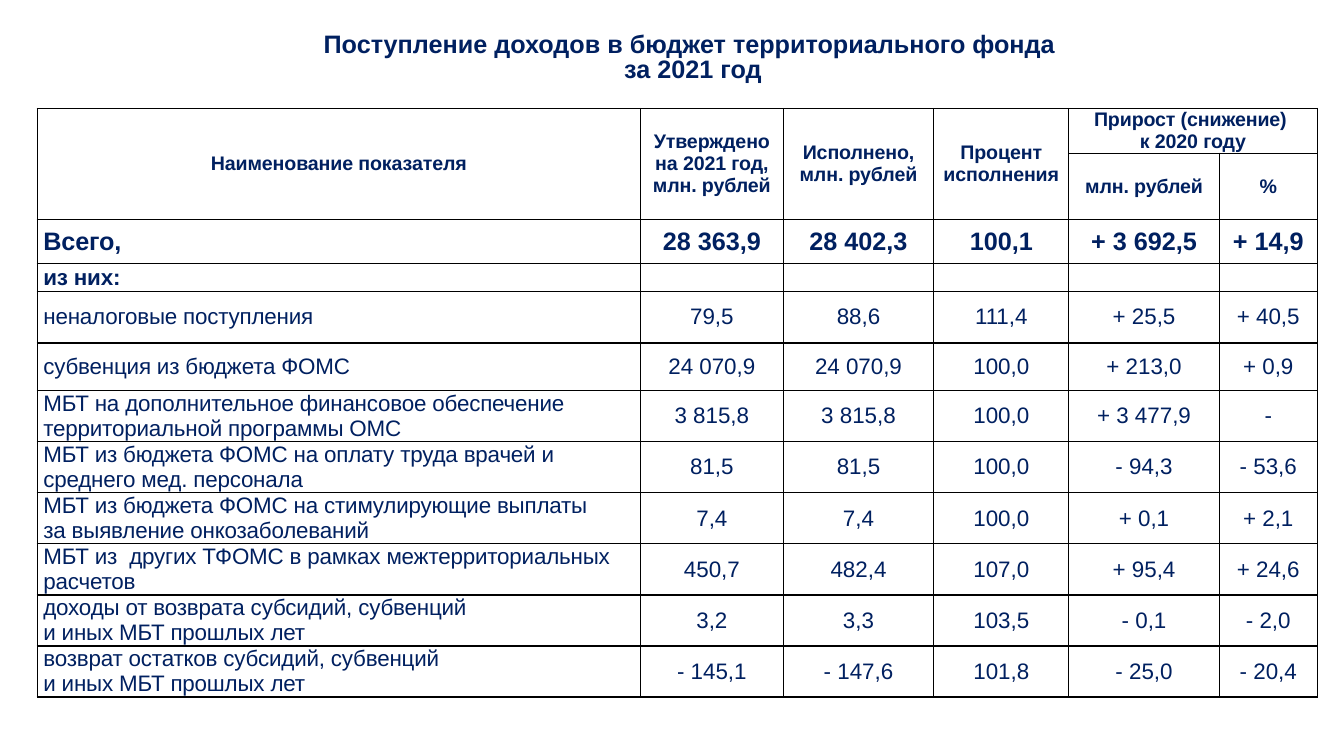
from lxml.etree import SubElement
from pptx import Presentation
from pptx.dml.color import RGBColor
from pptx.enum.text import MSO_ANCHOR, MSO_AUTO_SIZE, PP_ALIGN
from pptx.oxml.ns import qn
from pptx.util import Pt

COLORS = {"text": "002060", "border": "000000", "background": "FFFFFF"}
COLUMN_WIDTHS = [431, 102, 107.5, 96.5, 107.5, 70]
ROW_HEIGHTS = [32, 47.5, 31.5, 18.5, 37, 34] + [36.5] * 6
ROWS = [
    ["Наименование показателя", "Утверждено\nна 2021 год,\nмлн. рублей", "Исполнено, млн. рублей",
     "Процент\nисполнения", "Прирост (снижение) \vк 2020 году", ""],
    ["", "", "", "", "млн. рублей", "%"],
    ["Всего,", "28 363,9", "28 402,3", "100,1", "+ 3 692,5", "+ 14,9"],
    ["из них:", "", "", "", "", ""],
    ["неналоговые поступления", "79,5", "88,6", "111,4", "+ 25,5", "+ 40,5"],
    ["субвенция из бюджета ФОМС", "24 070,9", "24 070,9", "100,0", "+ 213,0", "+ 0,9"],
    ["МБТ на дополнительное финансовое обеспечение территориальной программы ОМС",
     "3 815,8", "3 815,8", "100,0", "+ 3 477,9", "-"],
    ["МБТ из бюджета ФОМС на оплату труда врачей и среднего мед. персонала",
     "81,5", "81,5", "100,0", "- 94,3", "- 53,6"],
    ["МБТ из бюджета ФОМС на стимулирующие выплаты \vза выявление онкозаболеваний",
     "7,4", "7,4", "100,0", "+ 0,1", "+ 2,1"],
    ["МБТ из  других ТФОМС в рамках межтерриториальных расчетов",
     "450,7", "482,4", "107,0", "+ 95,4", "+ 24,6"],
    ["доходы от возврата субсидий, субвенций \vи иных МБТ прошлых лет",
     "3,2", "3,3", "103,5", "- 0,1", "- 2,0"],
    ["возврат остатков субсидий, субвенций \vи иных МБТ прошлых лет",
     "- 145,1", "- 147,6", "101,8", "- 25,0", "- 20,4"],
]
HEADER_ROWS = 2
TOTAL_ROW = 2
FIRST_DETAIL_ROW = 4


def format_paragraph(paragraph, size, bold, alignment):
    paragraph.alignment = alignment
    for run in paragraph.runs:
        run.font.name = "Arial"
        run.font.size = Pt(size)
        run.font.bold = bold
        run.font.color.rgb = RGBColor.from_string(COLORS["text"])


def add_borders(cell):
    properties = cell._tc.get_or_add_tcPr()
    for side in ("a:lnL", "a:lnR", "a:lnT", "a:lnB"):
        line = SubElement(properties, qn(side), w=str(Pt(1)))
        fill = SubElement(line, qn("a:solidFill"))
        SubElement(fill, qn("a:srgbClr"), val=COLORS["border"])


presentation = Presentation()
presentation.slide_width = Pt(960)
presentation.slide_height = Pt(540)
slide = presentation.slides.add_slide(presentation.slide_layouts[5])

title = slide.shapes.title
title.left, title.top, title.width, title.height = Pt(60.5), Pt(21), Pt(869), Pt(39.5)
title_frame = title.text_frame
title_frame.text = "Поступление доходов в бюджет территориального фонда \vза 2021 год"
title_frame.word_wrap = True
title_frame.auto_size = MSO_AUTO_SIZE.NONE
title_frame.vertical_anchor = MSO_ANCHOR.TOP
title_frame.paragraphs[0].line_spacing = 0.8
format_paragraph(title_frame.paragraphs[0], 18, True, PP_ALIGN.CENTER)

table = slide.shapes.add_table(
    len(ROWS), len(COLUMN_WIDTHS), Pt(26.5), Pt(77.5), Pt(sum(COLUMN_WIDTHS)), Pt(sum(ROW_HEIGHTS))
).table
table.first_row = False
table.horz_banding = False
for column, width in zip(table.columns, COLUMN_WIDTHS):
    column.width = Pt(width)
for row, height in zip(table.rows, ROW_HEIGHTS):
    row.height = Pt(height)

for row_index, row_texts in enumerate(ROWS):
    is_header = row_index < HEADER_ROWS
    size = 14 if is_header else 18 if row_index == TOTAL_ROW else 16
    for column_index, text in enumerate(row_texts):
        cell = table.cell(row_index, column_index)
        cell.margin_left = cell.margin_right = Pt(4.5)
        cell.margin_top = cell.margin_bottom = 0
        cell.vertical_anchor = MSO_ANCHOR.MIDDLE
        add_borders(cell)
        cell.fill.solid()
        cell.fill.fore_color.rgb = RGBColor.from_string(COLORS["background"])
        cell.text_frame.text = text
        centered = is_header or column_index > 0
        for paragraph in cell.text_frame.paragraphs:
            format_paragraph(paragraph, size, row_index < FIRST_DETAIL_ROW,
                             PP_ALIGN.CENTER if centered else PP_ALIGN.LEFT)
            for run in paragraph.runs:
                if is_header or column_index == 0:
                    run.font._element.set("spc", "-10")
            if not text:
                SubElement(paragraph._p, qn("a:endParaRPr"), sz=str(size * 100))

for column_index in range(4):
    table.cell(0, column_index).merge(table.cell(1, column_index))
table.cell(0, 4).merge(table.cell(0, 5))

presentation.save("out.pptx")
